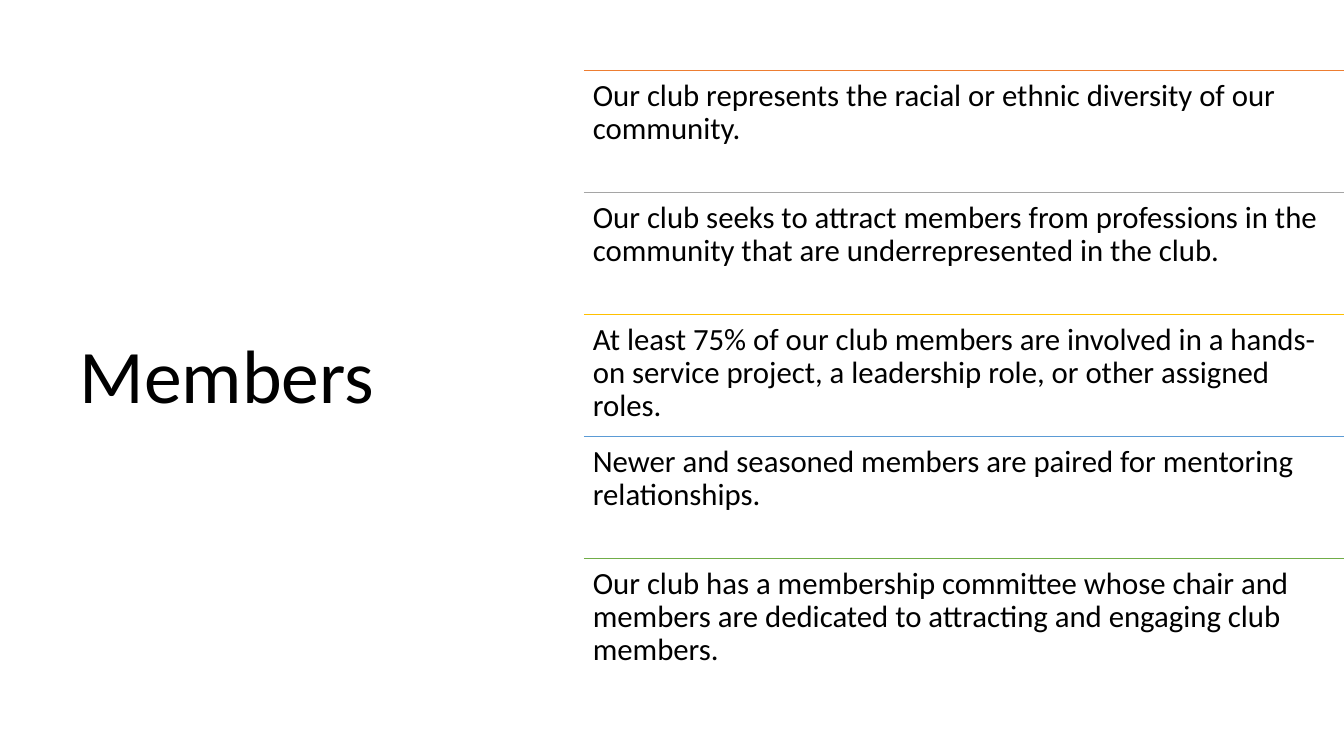
from dataclasses import dataclass

from pptx import Presentation
from pptx.dml.color import RGBColor
from pptx.enum.shapes import MSO_CONNECTOR
from pptx.enum.text import MSO_ANCHOR, MSO_AUTO_SIZE, PP_ALIGN
from pptx.oxml.ns import qn
from pptx.util import Inches, Pt


@dataclass(frozen=True)
class Theme:
    font: str = "Calibri"
    text: str = "000000"
    background: str = "FFFFFF"
    title_size: int = 54
    body_size: int = 22
    rule_width: int = 1
    line_spacing: float = 0.9


THEME = Theme()
LIST_LEFT, LIST_TOP = 5.79, 0.7
LIST_WIDTH, ROW_HEIGHT = 7.55, 1.21
STATEMENTS = [
    ("ED7D31", "Our club represents the racial or ethnic diversity of our community."),
    ("A5A5A5", "Our club seeks to attract members from professions in the community "
               "that are underrepresented in the club."),
    ("FFC000", "At least 75% of our club members are involved in a hands-on service "
               "project, a leadership role, or other assigned roles."),
    ("5B9BD5", "Newer and seasoned members are paired for mentoring relationships."),
    ("70AD47", "Our club has a membership committee whose chair and members are "
               "dedicated to attracting and engaging club members."),
]


def set_attributes(target, values):
    for name, value in values.items():
        setattr(target, name, value)


def write_text(frame, text, size, **frame_format):
    """Fill a text frame with one left-aligned paragraph in the theme font."""
    set_attributes(frame, {"word_wrap": True, "auto_size": MSO_AUTO_SIZE.NONE, **frame_format})
    para = frame.paragraphs[0]
    set_attributes(para, {"alignment": PP_ALIGN.LEFT, "line_spacing": THEME.line_spacing})
    span = para.add_run()
    span.text = text
    set_attributes(span.font, {"name": THEME.font, "size": Pt(size)})
    span.font.color.rgb = RGBColor.from_string(THEME.text)


def add_title(page, text):
    title = page.shapes.title
    set_attributes(title, {"left": Inches(0.69), "top": Inches(0.7),
                           "width": Inches(3.74), "height": Inches(6.11)})
    write_text(title.text_frame, text, THEME.title_size, vertical_anchor=MSO_ANCHOR.MIDDLE)


def add_rule(page, top, color):
    start, end = Inches(LIST_LEFT), Inches(LIST_LEFT + LIST_WIDTH)
    rule = page.shapes.add_connector(MSO_CONNECTOR.STRAIGHT, start, Inches(top), end, Inches(top))
    rule.line.color.rgb = RGBColor.from_string(color)
    rule.line.width = Pt(THEME.rule_width)
    properties = rule._element.spPr
    properties.append(properties.makeelement(qn("a:effectLst"), {}))


def add_statement(page, top, text):
    box = page.shapes.add_textbox(Inches(LIST_LEFT), Inches(top),
                                  Inches(LIST_WIDTH), Inches(ROW_HEIGHT))
    sides = ("left", "top", "right", "bottom")
    margins = {f"margin_{side}": Inches(0.09) for side in sides}
    write_text(box.text_frame, text, THEME.body_size,
               vertical_anchor=MSO_ANCHOR.TOP, **margins)


def main():
    deck = Presentation()
    set_attributes(deck, {"slide_width": Inches(13.33), "slide_height": Inches(7.5)})
    page = deck.slides.add_slide(deck.slide_layouts[5])
    page.background.fill.solid()
    page.background.fill.fore_color.rgb = RGBColor.from_string(THEME.background)

    add_title(page, "Members")
    for row, (color, text) in enumerate(STATEMENTS):
        top = LIST_TOP + row * ROW_HEIGHT
        add_rule(page, top, color)
        add_statement(page, top, text)
    deck.save("out.pptx")


if __name__ == "__main__":
    main()
